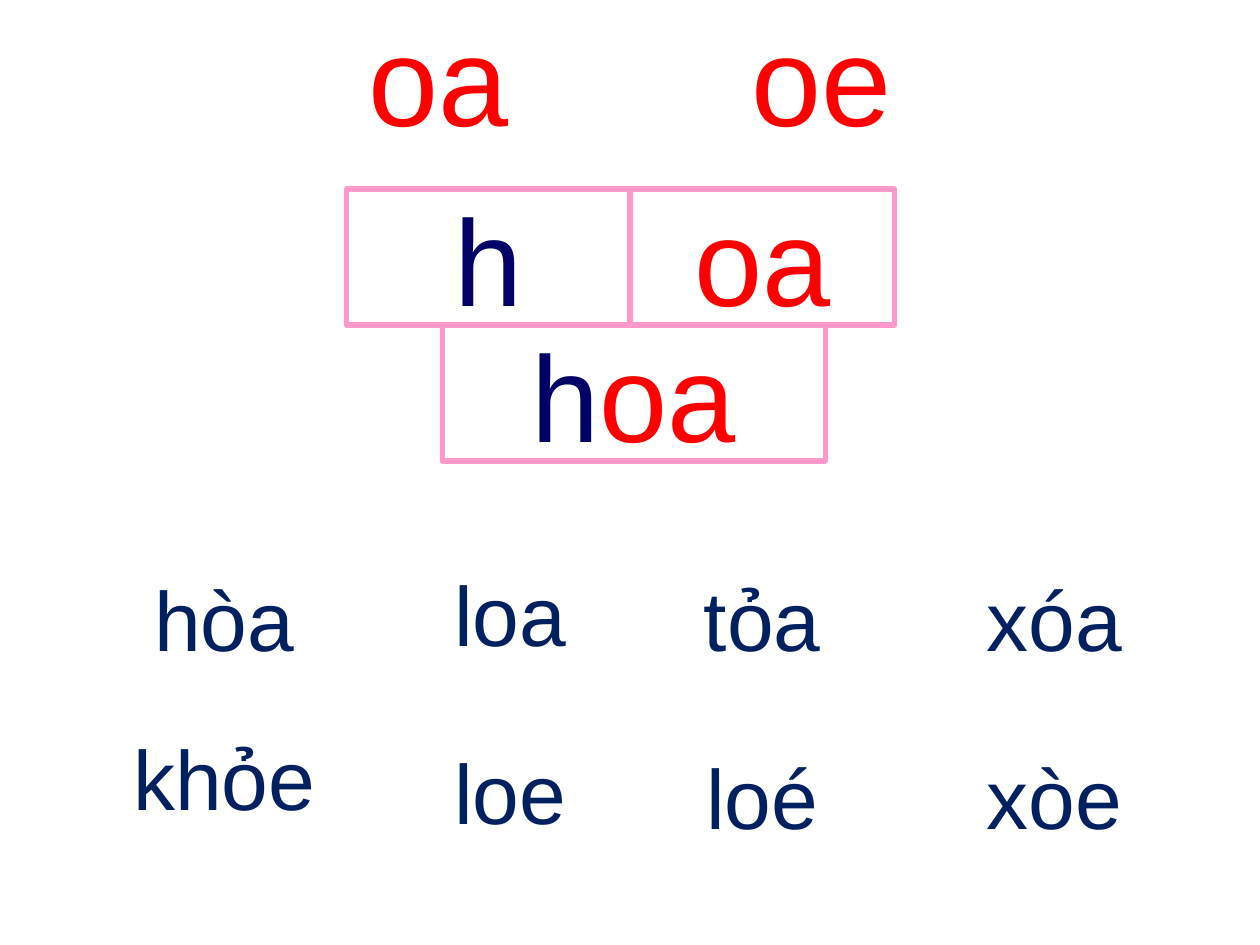
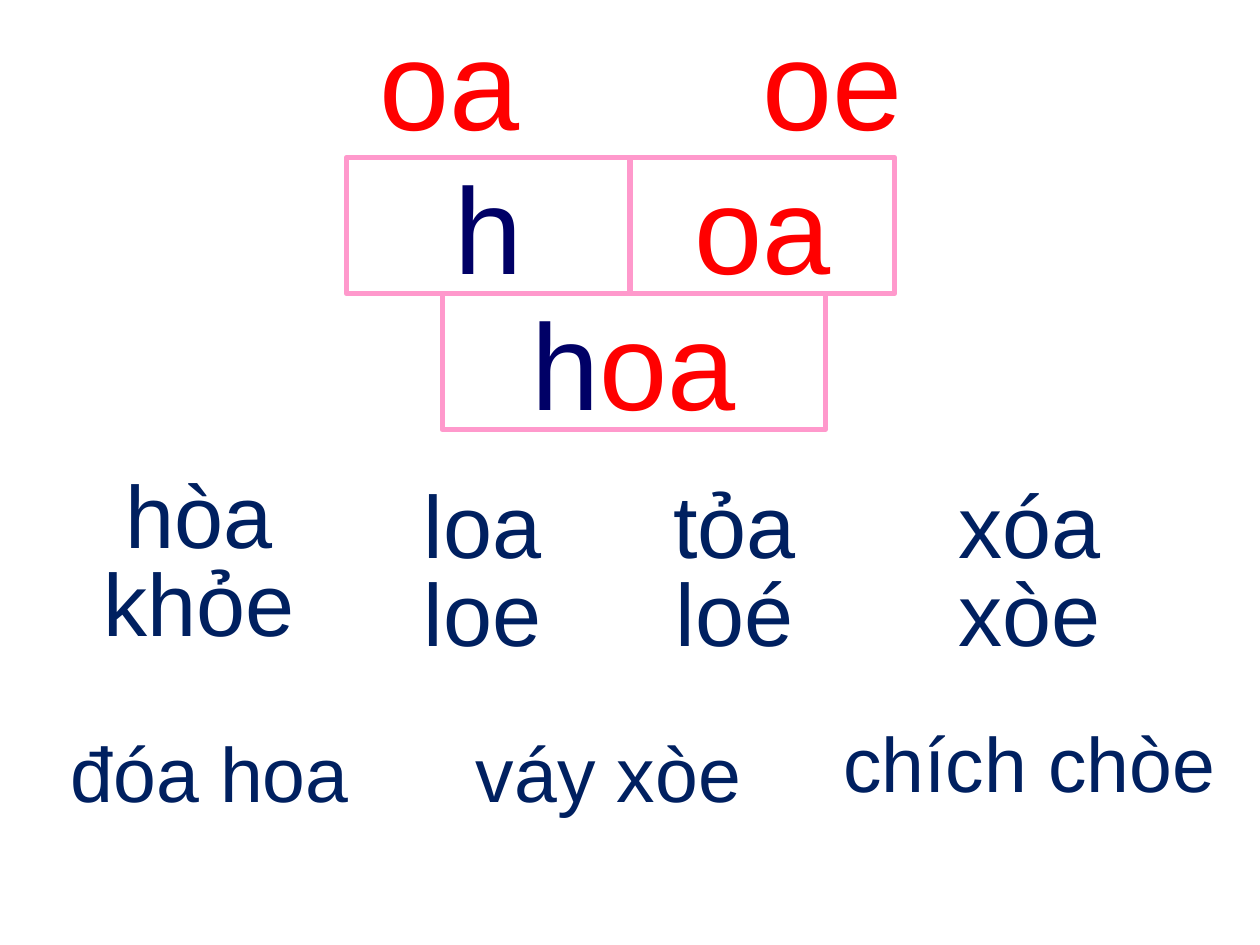
from pptx import Presentation
from pptx.dml.color import RGBColor
from pptx.enum.shapes import MSO_SHAPE
from pptx.enum.text import MSO_ANCHOR, PP_ALIGN
from pptx.util import Inches, Pt

COLORS = {"red": "FF0000", "pink": "FF99CC", "navy": "000066", "blue": "002060"}
WORDS = [["hòa", "khỏe"], ["loa", "loe"], ["tỏa", "loé"], ["xóa", "xòe"]]


def color(name):
    return RGBColor.from_string(COLORS[name])


class Deck:
    font = "Arial"
    frame = {"word_wrap": True, "vertical_anchor": MSO_ANCHOR.MIDDLE}

    def __init__(self):
        self.deck = Presentation()
        self.deck.slide_width, self.deck.slide_height = Inches(10), Inches(7.5)
        self.slide = None

    def page(self):
        self.slide = self.deck.slides.add_slide(self.deck.slide_layouts[6])

    def apply(self, target, values):
        for key, value in values.items():
            setattr(target, key, value)

    def letter(self, shape, lines, size, **layout):
        frame = shape.text_frame
        self.apply(frame, self.frame)
        for index, line in enumerate(lines):
            par = frame.add_paragraph() if index else frame.paragraphs[0]
            self.apply(par, {"alignment": PP_ALIGN.CENTER, **layout})
            for text, tone in line:
                run = par.add_run()
                run.text = text
                self.apply(run.font, {"name": self.font, "size": Pt(size)})
                run.font.color.rgb = color(tone)

    def text(self, area, words, size, tone="blue", **layout):
        box = self.slide.shapes.add_textbox(*map(Inches, area))
        self.letter(box, [[(word, tone)] for word in words], size, **layout)

    def block(self, area, runs):
        shape = self.slide.shapes.add_shape(MSO_SHAPE.RECTANGLE, *map(Inches, area))
        shape.shadow.inherit = False
        shape.fill.background()
        shape.line.color.rgb = color("pink")
        shape.line.width = Pt(3)
        self.letter(shape, [runs], 70)

    def title(self, center, top):
        for word, shift in (("oa", -1.52), ("oe", 1.52)):
            self.text((center + shift - 1, top, 2, 1.37), [word], 72, "red")

    def blend(self, top, high=1.08):
        start, rhyme = ("h", "navy"), ("oa", "red")
        self.block((2.75, top, 2.25, high), [start])
        self.block((5, top, 2.1, high), [rhyme])
        self.block((3.51, top + high, 3.04, high), [start, rhyme])

    def columns(self, spots, size, gap, rates):
        for (left, top, high), words, rate in zip(spots, WORDS, rates):
            self.text((left, top, 2.5, high), words, size,
                      line_spacing=rate, space_before=Pt(gap))


def main():
    deck = Deck()

    deck.page()
    deck.title(5, -0.08)
    deck.blend(1.5)
    spots = [(0.53, 4.25, 2.17), (2.8, 4.54, 1.5), (4.8, 4.58, 1.5), (7.12, 4.58, 1.5)]
    deck.columns(spots, 48, 4, [1.5, 1.7, 1.7, 1.7])

    deck.page()
    deck.title(5.09, -0.05)
    deck.blend(1.25)
    spots = [(0.33, 3.75, 1.5)] + [(left, 3.83, 1.5) for left in (2.58, 4.58, 6.92)]
    deck.columns(spots, 50.4, 2, [0.8] * 4)
    for phrase, left, top, width in (
        ("đóa hoa", -0.25, 5.5, 3.83),
        ("váy xòe", 2.83, 5.5, 4),
        ("chích chòe", 5.42, 5.42, 5.5),
    ):
        deck.text((left, top, width, 1.25), [phrase], 44, space_before=Pt(7))

    deck.deck.save("out.pptx")


if __name__ == "__main__":
    main()
